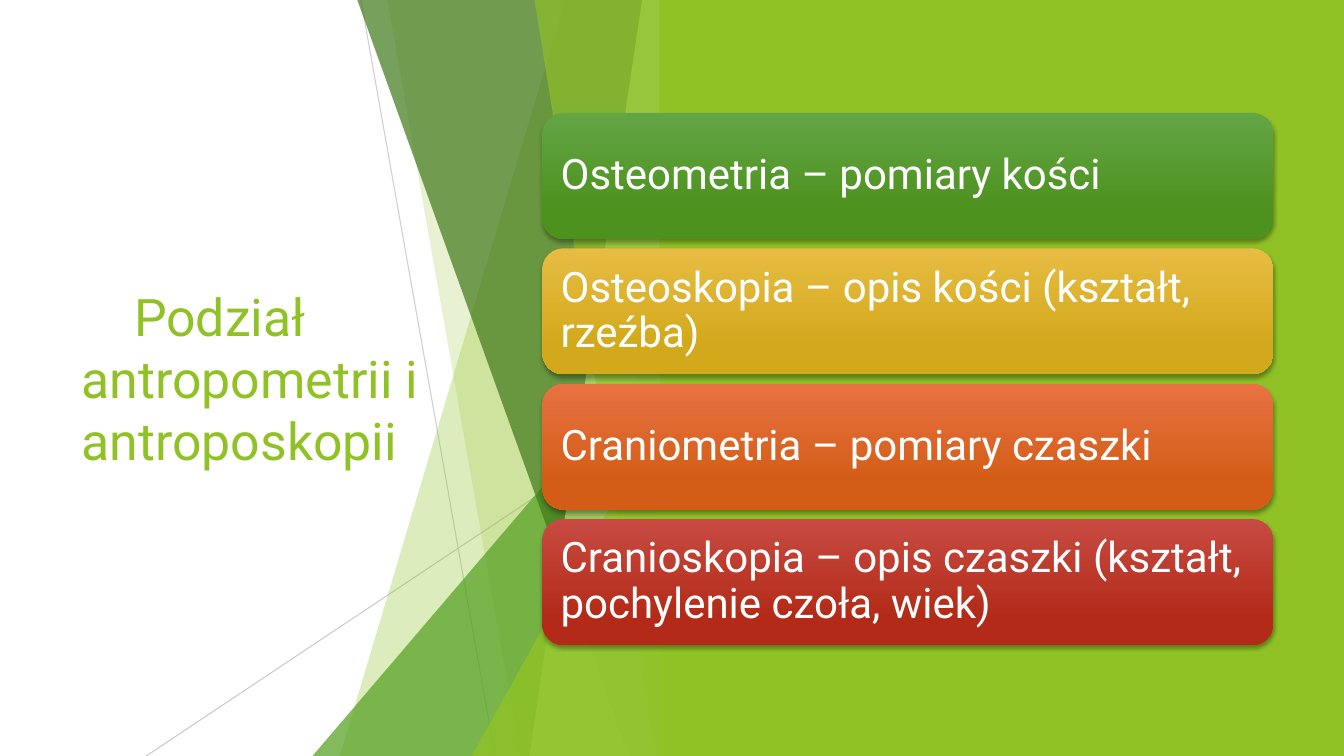
from lxml.etree import SubElement
from pptx import Presentation
from pptx.dml.color import RGBColor
from pptx.enum.shapes import MSO_CONNECTOR, MSO_SHAPE
from pptx.enum.text import MSO_ANCHOR, MSO_AUTO_SIZE, PP_ALIGN
from pptx.oxml.ns import qn
from pptx.util import Inches, Pt

RECTANGLE, ROUNDED, TRIANGLE = MSO_SHAPE.RECTANGLE, MSO_SHAPE.ROUNDED_RECTANGLE, MSO_SHAPE.ISOSCELES_TRIANGLE
STRAIGHT, LEFT, MIDDLE, NO_FIT = MSO_CONNECTOR.STRAIGHT, PP_ALIGN.LEFT, MSO_ANCHOR.MIDDLE, MSO_AUTO_SIZE.NONE
WHITE = RGBColor(0xFF, 0xFF, 0xFF)
GREY = RGBColor(0xBF, 0xBF, 0xBF)
LIME = RGBColor(0x90, 0xC2, 0x26)
GREEN = RGBColor(0x54, 0xA0, 0x21)
DARK_GREEN = RGBColor(0x3F, 0x78, 0x19)
PALE_LIME = RGBColor(0xC0, 0xE4, 0x74)

WIDTH, HEIGHT = 13.33, 7.5
FONT = "Roboto"
TITLE = "Podział antropometrii i antroposkopii"
BARS = [
    ("Osteometria – pomiary kości", RGBColor(0x63, 0xA5, 0x45), RGBColor(0x4D, 0x92, 0x1E)),
    ("Osteoskopia – opis kości (kształt, rzeźba)", RGBColor(0xE7, 0xBC, 0x43), RGBColor(0xD2, 0xA9, 0x1B)),
    ("Craniometria – pomiary czaszki", RGBColor(0xE8, 0x72, 0x42), RGBColor(0xD3, 0x5D, 0x16)),
    ("Cranioskopia – opis czaszki (kształt, pochylenie czoła, wiek)",
     RGBColor(0xC7, 0x4B, 0x42), RGBColor(0xB3, 0x2B, 0x18)),
]
BAR_LEFT, BAR_TOP, BAR_WIDTH, BAR_HEIGHT, BAR_STEP = 5.38, 1.12, 7.25, 1.25, 1.343
PANEL_LEFT, FACET_TOP, FACET_RIGHT = 6.54, -0.01, 6.66
RAYS = [((3.58, 0), (4.91, HEIGHT), 75), ((FACET_RIGHT, 4.03), (1.45, HEIGHT), 80)]
FACETS = [
    ("sheet", 5.61, 3.37, LIME, 30),
    ("sheet", 3.84, 5.16, LIME, 20),
    ("corner", 3.1, 3.33, GREEN, 72),
    ("sheet", 3.54, 6.24, DARK_GREEN, 70),
    ("sheet", 6.37, 5.25, PALE_LIME, 70),
    ("sheet", 5.3, 6.51, LIME, 65),
    ("corner", 4.68, 3.93, LIME, 80),
]


def apply(target, values):
    for name, value in values.items():
        setattr(target, name, value)


def set_opacity(shape, percent):
    for color in shape._element.spPr.iter(qn("a:srgbClr")):
        SubElement(color, qn("a:alpha"), val=str(percent * 1000))


def paint(shape, color):
    shape.shadow.inherit = False
    shape.fill.solid()
    shape.fill.fore_color.rgb = color
    shape.line.fill.background()


def write(shape, text, size, color, frame_format, paragraph_format):
    frame = shape.text_frame
    apply(frame, {"word_wrap": True, "auto_size": NO_FIT, "vertical_anchor": MIDDLE, **frame_format})
    paragraph = frame.paragraphs[0]
    apply(paragraph, {"alignment": LEFT, **paragraph_format})
    run = paragraph.add_run()
    run.text = text
    apply(run.font, {"name": FONT, "size": Pt(size)})
    run.font.color.rgb = color
    return paragraph


def add_box(shapes, preset, left, top, width, height):
    return shapes.add_shape(preset, Inches(left), Inches(top), Inches(width), Inches(height))


def add_ray(shapes, start, end, opacity):
    ray = shapes.add_connector(STRAIGHT, *(Inches(value) for value in start + end))
    ray.line.color.rgb = GREY
    ray.line.width = Pt(0.75)
    set_opacity(ray, opacity)
    SubElement(ray._element.spPr, qn("a:effectLst"))


def add_facet(shapes, kind, first, second, color, opacity):
    if kind == "corner":
        facet = add_box(shapes, TRIANGLE, first, second, FACET_RIGHT - first, HEIGHT - second)
        facet.adjustments[0] = 1
    else:
        outline = [(FACET_RIGHT, FACET_TOP), (FACET_RIGHT, HEIGHT), (second, HEIGHT)]
        builder = shapes.build_freeform(Inches(first), Inches(FACET_TOP))
        builder.add_line_segments([(Inches(x), Inches(y)) for x, y in outline], close=True)
        facet = builder.convert_to_shape()
    paint(facet, color)
    set_opacity(facet, opacity)


def add_bar(shapes, row, text, top_color, bottom_color):
    bar = add_box(shapes, ROUNDED, BAR_LEFT, BAR_TOP + row * BAR_STEP, BAR_WIDTH, BAR_HEIGHT)
    bar.fill.gradient()
    bar.fill.gradient_angle = 270
    for stop, color, position in zip(bar.fill.gradient_stops, (top_color, bottom_color), (0, 0.78)):
        stop.color.rgb = color
        stop.position = position
    bar.line.fill.background()
    bar.shadow.inherit = False
    effects = bar._element.spPr.find(qn("a:effectLst"))
    shadow = SubElement(effects, qn("a:outerShdw"), blurRad=str(Pt(3)), dist=str(Pt(2)),
                        dir="5400000", rotWithShape="0")
    SubElement(SubElement(shadow, qn("a:srgbClr"), val="000000"), qn("a:alpha"), val="35000")
    sides = ("margin_left", "margin_right", "margin_top", "margin_bottom")
    write(bar, text, 30, WHITE, dict.fromkeys(sides, Inches(0.12)), {"line_spacing": 0.9})


def main():
    presentation = Presentation()
    presentation.slide_width, presentation.slide_height = Inches(WIDTH), Inches(HEIGHT)
    slide = presentation.slides.add_slide(presentation.slide_layouts[5])
    shapes = slide.shapes
    title = shapes.title
    apply(title, {"left": Inches(0.71), "top": Inches(1.51), "width": Inches(3.88), "height": Inches(4.48)})
    paragraph = write(title, TITLE, 37, LIME, {}, {})
    paragraph._p.get_or_add_pPr().set("indent", str(Inches(0.52)))
    for ray in RAYS:
        add_ray(shapes, *ray)
    for facet in FACETS:
        add_facet(shapes, *facet)
    paint(add_box(shapes, RECTANGLE, PANEL_LEFT, 0, WIDTH - PANEL_LEFT, HEIGHT), LIME)
    for row, bar in enumerate(BARS):
        add_bar(shapes, row, *bar)
    presentation.save("out.pptx")


if __name__ == "__main__":
    main()
